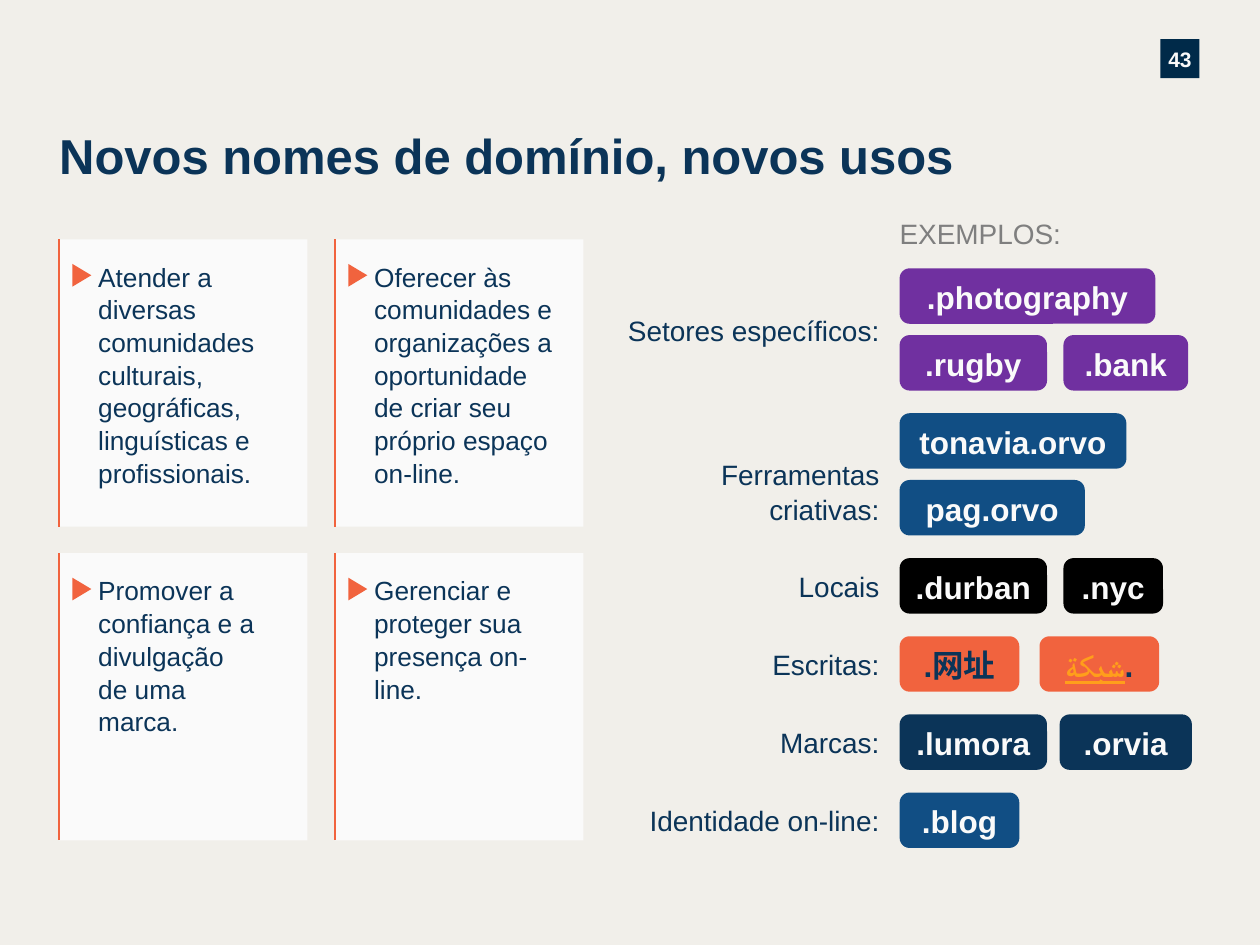
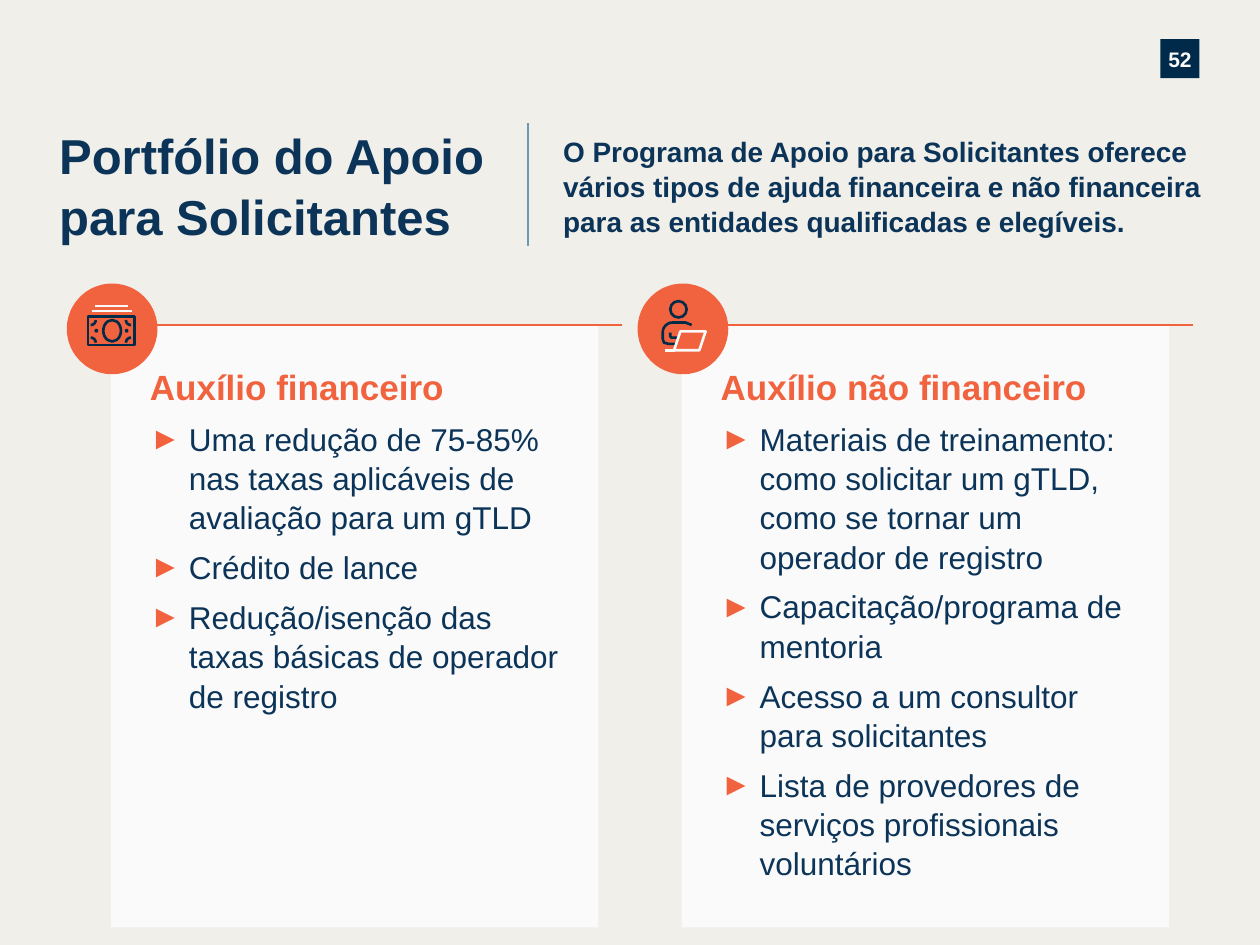
from math import cos, radians, sin

from lxml import etree
from pptx import Presentation
from pptx.dml.color import RGBColor
from pptx.enum.shapes import MSO_CONNECTOR, MSO_SHAPE
from pptx.enum.text import MSO_ANCHOR, MSO_AUTO_SIZE, PP_ALIGN
from pptx.oxml.ns import qn
from pptx.util import Inches, Pt

RECT, ROUND = MSO_SHAPE.RECTANGLE, MSO_SHAPE.ROUNDED_RECTANGLE
OVAL, WEDGE = MSO_SHAPE.OVAL, MSO_SHAPE.ISOSCELES_TRIANGLE
LEFT, MID, RIGHT = PP_ALIGN.LEFT, PP_ALIGN.CENTER, PP_ALIGN.RIGHT
TOP, CENTRE = MSO_ANCHOR.TOP, MSO_ANCHOR.MIDDLE

PAPER, WHITE, NAVY, INK = "F1EFEA", "FAFAFA", "0B3458", "002B49"
BADGE, ORANGE, AMBER, GREY = "002A49", "F1633E", "FF9E1B", "7F7F7F"
BLUE, STEEL, PURPLE, BLACK = "114E84", "6D99B3", "7030A0", "000000"

BODY = {"name": "Arial", "size": Pt(15), "bold": False, "color": NAVY}
LABEL = BODY | {"size": Pt(16)}
LEAD = LABEL | {"bold": True}
TITLE = LEAD | {"size": Pt(28)}
LIST = BODY | {"size": Pt(18)}
HEAD = {"size": Pt(20), "bold": True, "color": ORANGE}
TAG = LIST | {"bold": True, "color": WHITE}
PAGE = TAG | {"size": Pt(12)}

CARDS = [
    (["Atender a diversas", "comunidades culturais,",
      "geográficas, linguísticas e profissionais."], 0.24),
    (["Oferecer às comunidades e organizações a oportunidade de criar seu "
      "próprio espaço on-line."], 0.2),
    (["Promover a confiança e a divulgação de uma marca."], 0.39),
    (["Gerenciar e proteger sua presença on-line."], 0.2),
]

# label, fill, text colour, gap between tags, lines of (text, width)
GROUPS = [
    ("Setores específicos:", PURPLE, WHITE, 0.13,
     [[(".photography", 2.03)], [(".rugby", 1.17), (".bank", 0.99)]]),
    ("Ferramentas criativas:", BLUE, WHITE, 0,
     [[("tonavia.orvo", 1.8)], [("pag.orvo", 1.47)]]),
    ("Locais", BLACK, WHITE, 0.13, [[(".durban", 1.17), (".nyc", 0.79)]]),
    ("Escritas:", ORANGE, NAVY, 0.16,
     [[(".网址", 0.95),
       ([("شبكة", {"color": AMBER, "underline": True}), (".", {})], 0.95)]]),
    ("Marcas:", NAVY, WHITE, 0.1, [[(".lumora", 1.17), (".orvia", 1.05)]]),
    ("Identidade on-line:", BLUE, WHITE, 0, [[(".blog", 0.95)]]),
]

MONEY = [
    "Uma redução de 75-85% nas taxas aplicáveis de avaliação para um gTLD",
    "Crédito de lance",
    "Redução/isenção das taxas básicas de operador de registro",
]
SKILLS = [
    "Materiais de treinamento: como solicitar um gTLD, como se tornar um "
    "operador de registro",
    "Capacitação/programa de mentoria",
    "Acesso a um consultor para solicitantes",
    "Lista de provedores de serviços profissionais voluntários",
]


def rgb(code):
    return RGBColor.from_string(code)


def style(font, values):
    for key, value in values.items():
        if key == "color":
            font.color.rgb = rgb(value)
        else:
            setattr(font, key, value)


def write(frame, paras, look, align=LEFT, anchor=TOP, pads=(0, 0, 0, 0), pitch=1.04):
    """Fill a text frame; a paragraph is a string or a list of (text, format)."""
    frame.word_wrap = True
    frame.auto_size = MSO_AUTO_SIZE.NONE
    frame.vertical_anchor = anchor
    for side, pad in zip(("left", "top", "right", "bottom"), pads):
        setattr(frame, "margin_" + side, Inches(pad))
    for i, runs in enumerate(paras):
        para = frame.paragraphs[0] if i == 0 else frame.add_paragraph()
        para.alignment, para.line_spacing = align, pitch
        for text, extra in [(runs, {})] if isinstance(runs, str) else runs:
            run = para.add_run()
            run.text = text
            style(run.font, look | extra)


def shape(slide, kind, x, y, w, h, fill=None, line=None):
    item = slide.shapes.add_shape(kind, *map(Inches, (x, y, w, h)))
    paint(item, fill, line)
    return item


def paint(item, fill, line):
    item.shadow.inherit = False
    if fill:
        item.fill.solid()
        item.fill.fore_color.rgb = rgb(fill)
    else:
        item.fill.background()
    if line:
        item.line.color.rgb = rgb(line)
        item.line.width = Pt(1.5)
    else:
        item.line.fill.background()


def rule(slide, x1, y1, x2, y2, color=ORANGE, width=1.25):
    line = slide.shapes.add_connector(
        MSO_CONNECTOR.STRAIGHT, *map(Inches, (x1, y1, x2, y2)))
    line.line.color.rgb = rgb(color)
    line.line.width = Pt(width)
    etree.SubElement(line._element.spPr, qn("a:effectLst"))


def stroke(slide, x, y, points, color, close=False):
    """Draw an unfilled outline through points given from (x, y)."""
    spots = [(Inches(x + a), Inches(y + b)) for a, b in points]
    pen = slide.shapes.build_freeform(*spots[0])
    pen.add_line_segments(spots[1:], close=close)
    paint(pen.convert_to_shape(), None, color)


def arc(x, y, r, start):
    """Points of a quarter turn, clockwise from the start angle."""
    turns = [radians(start + step) for step in range(0, 91, 15)]
    return [(x + r * cos(t), y + r * sin(t)) for t in turns]


def note(slide, x, y, w, h, text, look, align=LEFT):
    box = slide.shapes.add_textbox(*map(Inches, (x, y, w, h)))
    write(box.text_frame, [text], look, align)


def bullet(para):
    para.space_before = Pt(6)
    props = para._p.get_or_add_pPr()
    props.set("marL", str(Inches(0.31)))
    props.set("indent", str(-Inches(0.31)))
    tint = etree.SubElement(props, qn("a:buClr"))
    etree.SubElement(tint, qn("a:srgbClr"), val=ORANGE)
    etree.SubElement(props, qn("a:buFont"), typeface="Arial")
    etree.SubElement(props, qn("a:buChar"), char="►")


def base(deck, page, title, width, height):
    """Add a slide with the shared ground, page badge and title."""
    slide = deck.slides.add_slide(deck.slide_layouts[5])
    slide.background.fill.solid()
    slide.background.fill.fore_color.rgb = rgb(PAPER)
    badge = shape(slide, RECT, 9.21, 0.31, 0.31, 0.31, BADGE)
    write(badge.text_frame, [page], PAGE, MID, CENTRE, pitch=1.08)
    head = slide.shapes.title
    head.left, head.top = Inches(0.47), Inches(0.98)
    head.width, head.height = Inches(width), Inches(height)
    write(head.text_frame, [title], TITLE)
    return slide


def card(slide, x, y, w, h, paras, pad):
    box = shape(slide, RECT, x, y, w, h, WHITE)
    write(box.text_frame, paras, BODY, pads=(0.31, 0.16, pad, 0.2))
    rule(slide, x, y, x, y + h)
    mark = shape(slide, WEDGE, x + 0.09, y + 0.21, 0.18, 0.15, ORANGE)
    mark.rotation = 90


def cards(slide, x, y):
    for i, (paras, pad) in enumerate(CARDS):
        row, col = divmod(i, 2)
        card(slide, x + col * 2.19, y + row * 2.49, 1.97, 2.28, paras, pad)


def tag(slide, x, y, w, h, text, fill, color):
    box = shape(slide, ROUND, x, y, w, h, fill)
    box.adjustments[0] = 0.18
    write(box.text_frame, [text], TAG | {"color": color}, MID, CENTRE, pitch=1.06)


def samples(slide, x, y):
    """Stack the tag groups from (x, y), with labels on their left."""
    high, step, gap = 0.44, 0.53, 0.18
    note(slide, x, y - 0.42, 2.46, 0.27, "EXEMPLOS:", LABEL | {"color": GREY})
    for label, fill, color, space, lines in GROUPS:
        tall = (len(lines) - 1) * step + high
        note(slide, x - 2.2, y + tall / 2 - 0.14, 2.04, 0.27, label, LABEL, RIGHT)
        for i, line in enumerate(lines):
            left = x
            for text, wide in line:
                tag(slide, left, y + i * step, wide, high, text, fill, color)
                left += wide + space
        y += tall + gap


def cash(slide, x, y):
    shape(slide, RECT, x + 0.17, y + 0.26, 0.37, 0.23, line=INK)
    shape(slide, OVAL, x + 0.29, y + 0.29, 0.14, 0.17, line=INK)
    for dot in (0.23, 0.47):
        shape(slide, OVAL, x + dot, y + 0.37, 0.01, 0.01, line=INK)
    corners = [(0.19, 0.29), (0.51, 0.29), (0.51, 0.47), (0.19, 0.47)]
    for i, (a, b) in enumerate(corners):
        stroke(slide, x, y, arc(a, b, 0.04, i * 90), INK)
    for a, b, high in ((0.2, 0.52, 0.22), (0.22, 0.49, 0.18)):
        rule(slide, x + a, y + high, x + b, y + high, WHITE, 1.5)


def helper(slide, x, y):
    shape(slide, OVAL, x + 0.26, y + 0.14, 0.13, 0.13, line=INK)
    stroke(slide, x, y, [(0.32, 0.43), (0.27, 0.43), (0.26, 0.42), (0.26, 0.39)], INK)
    body = [(0.2, 0.44), (0.21, 0.47), (0.25, 0.48), (0.31, 0.48)]
    body = body[::-1] + arc(0.28, 0.39, 0.08, 180) + [(0.38, 0.31), (0.43, 0.33)]
    stroke(slide, x, y, body, INK)
    rule(slide, x + 0.22, y + 0.53, x + 0.3, y + 0.53, WHITE, 1.5)
    screen = [(0.34, 0.38), (0.54, 0.38), (0.49, 0.53), (0.29, 0.53)]
    stroke(slide, x, y, screen, WHITE, close=True)


def panel(slide, x, y, w, h, head, items, icon):
    box = shape(slide, RECT, x, y, w, h, WHITE)
    write(box.text_frame, [[(head, HEAD)], *items], LIST, pads=(0.31, 0.31, 0.24, 0.3))
    for para in box.text_frame.paragraphs[1:]:
        bullet(para)
    rule(slide, x, y, x + w + 0.19, y)
    shape(slide, OVAL, x - 0.35, y - 0.33, 0.72, 0.72, ORANGE)
    icon(slide, x - 0.35, y - 0.33)


def uses(deck):
    slide = base(deck, "43", "Novos nomes de domínio, novos usos", 7.29, 0.56)
    cards(slide, 0.47, 1.9)
    samples(slide, 7.14, 2.13)


def support(deck):
    slide = base(deck, "52", "Portfólio do Apoio para Solicitantes", 3.87, 0.92)
    rule(slide, 4.19, 0.98, 4.19, 1.95, STEEL)
    note(slide, 4.47, 1.06, 5.23, 0.81,
         "O Programa de Apoio para Solicitantes oferece vários tipos de ajuda "
         "financeira e não financeira para as entidades qualificadas e elegíveis.",
         LEAD)
    panels = [("Auxílio financeiro", MONEY, cash),
              ("Auxílio não financeiro", SKILLS, helper)]
    for i, parts in enumerate(panels):
        panel(slide, 0.88 + i * 4.53, 2.58, 3.87, 4.78, *parts)


def main():
    deck = Presentation()
    deck.slide_width, deck.slide_height = Inches(10), Inches(7.5)
    uses(deck)
    support(deck)
    deck.save("out.pptx")


if __name__ == "__main__":
    main()
